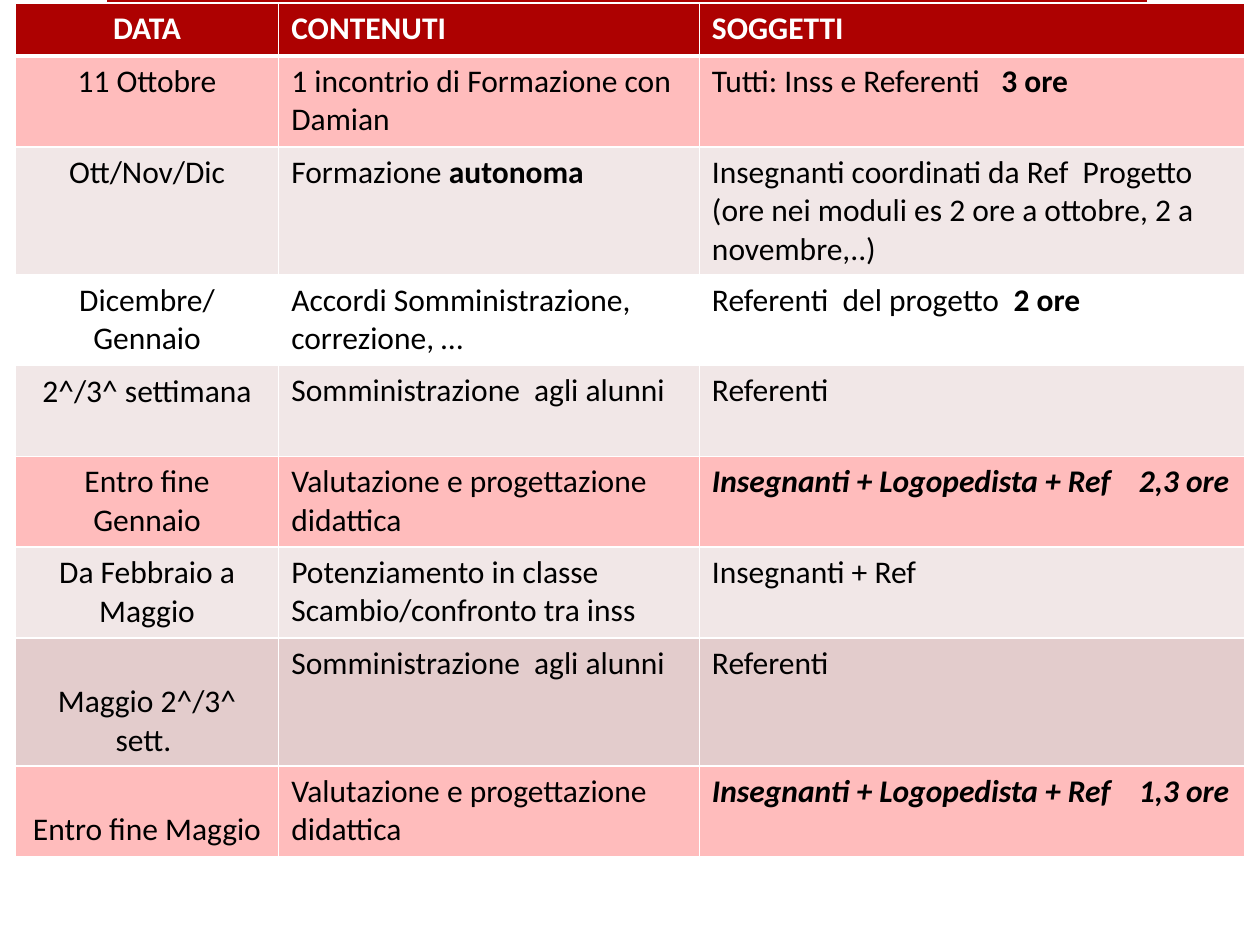
from lxml import etree
from pptx import Presentation
from pptx.dml.color import RGBColor
from pptx.enum.shapes import MSO_SHAPE
from pptx.enum.text import PP_ALIGN
from pptx.oxml.ns import qn
from pptx.util import Cm, Pt

RECTANGLE = MSO_SHAPE.RECTANGLE
CENTER, LEFT = PP_ALIGN.CENTER, PP_ALIGN.LEFT

RED, PINK, PALE, ROSE = "AD0101", "FFBCBC", "F1E7E7", "E3CCCC"
WHITE, BLACK = "FFFFFF", "000000"
BOLD = {"bold": True}
BOLD_ITALIC = {"bold": True, "italic": True}
BLANK_LINE = Cm(0.77)


def color(hex_value):
    return RGBColor.from_string(hex_value)


def add_borders(cell, bottom_width):
    """Draw white cell borders; call before the cell is filled."""
    properties = cell._tc.get_or_add_tcPr()
    widths = {"a:lnL": 1, "a:lnR": 1, "a:lnT": 1, "a:lnB": bottom_width}
    for tag, width in widths.items():
        line = etree.SubElement(properties, qn(tag), w=str(Pt(width)))
        fill = etree.SubElement(line, qn("a:solidFill"))
        etree.SubElement(fill, qn("a:srgbClr"), val=WHITE)


# Each row: fill, height in cm, lines left free above the date, cells.
# Each cell is a list of paragraphs, each paragraph a list of (text, format).
rows = [
    (RED, 1.07, 0, [[[("DATA", BOLD)]], [[("CONTENUTI", BOLD)]], [[("SOGGETTI", BOLD)]]]),
    (PINK, 1.83, 0, [
        [[("11 Ottobre", {})]],
        [[("1 incontrio di Formazione con Damian", {})]],
        [[("Tutti: Inss e Referenti   ", {}), ("3 ore", BOLD)]]]),
    (PALE, 2.58, 0, [
        [[("Ott/Nov/Dic", {})]],
        [[("Formazione ", {}), ("autonoma", BOLD)]],
        [[("Insegnanti coordinati da Ref  Progetto  "
           "(ore nei moduli es 2 ore a ottobre, 2 a novembre,..)", {})]]]),
    (WHITE, 1.83, 0, [
        [[("Dicembre/Gennaio", {})]],
        [[("Accordi Somministrazione, correzione, …", {})]],
        [[("Referenti  del progetto  ", {}), ("2 ore", BOLD)]]]),
    (PALE, 1.83, 0, [
        [[("2^/3^ settimana", {})]],
        [[("Somministrazione  agli alunni", {})]],
        [[("Referenti", {})]]]),
    (PINK, 1.83, 0, [
        [[("Entro fine Gennaio", {})]],
        [[("Valutazione e progettazione didattica", {})]],
        [[("Insegnanti + Logopedista + Ref    2,3 ore", BOLD_ITALIC)]]]),
    (PALE, 1.83, 0, [
        [[("Da Febbraio a Maggio", {})]],
        [[("Potenziamento in classe", {})], [("Scambio/confronto tra inss", {})]],
        [[("Insegnanti + Ref", {})]]]),
    (ROSE, 2.58, 1, [
        [[("Maggio 2^/3^ sett. ", {})]],
        [[("Somministrazione  agli alunni", {})]],
        [[("Referenti", {})]]]),
    (PINK, 1.83, 1, [
        [[("Entro fine Maggio", {})]],
        [[("Valutazione e progettazione didattica", {})]],
        [[("Insegnanti + Logopedista + Ref    1,3 ore", BOLD_ITALIC)]]]),
]
column_widths = [5.31, 8.48, 11]

presentation = Presentation()
presentation.slide_width, presentation.slide_height = Cm(25.4), Cm(19.05)
slide = presentation.slides.add_slide(presentation.slide_layouts[6])

top_bar = slide.shapes.add_shape(RECTANGLE, Cm(2.16), Cm(0), Cm(20.96), Cm(1.07))
top_bar.shadow.inherit = False
top_bar.fill.solid()
top_bar.fill.fore_color.rgb = color(RED)
top_bar.line.fill.background()

table = slide.shapes.add_table(
    len(rows), len(column_widths), Cm(0.31), Cm(0.06),
    Cm(sum(column_widths)), Cm(sum(row[1] for row in rows))).table
table.horz_banding = False
for column, width in zip(table.columns, column_widths):
    column.width = Cm(width)

for row_index, (fill_color, height, free_lines, cells) in enumerate(rows):
    is_header = row_index == 0
    table.rows[row_index].height = Cm(height)
    for column_index, paragraphs in enumerate(cells):
        is_date = column_index == 0
        cell = table.cell(row_index, column_index)
        add_borders(cell, 3 if is_header else 1)
        cell.fill.solid()
        cell.fill.fore_color.rgb = color(fill_color)
        if is_date:
            cell.margin_top = Cm(0.13) + free_lines * BLANK_LINE
        for paragraph_index, runs in enumerate(paragraphs):
            frame = cell.text_frame
            paragraph = frame.add_paragraph() if paragraph_index else frame.paragraphs[0]
            paragraph.alignment = CENTER if is_date else LEFT
            for text, text_format in runs:
                run = paragraph.add_run()
                run.text = text
                run.font.color.rgb = color(WHITE if is_header else BLACK)
                font_values = {"name": "Calibri", "size": Pt(18), "bold": False,
                               "italic": False, **text_format}
                for name, value in font_values.items():
                    setattr(run.font, name, value)

presentation.save("out.pptx")
